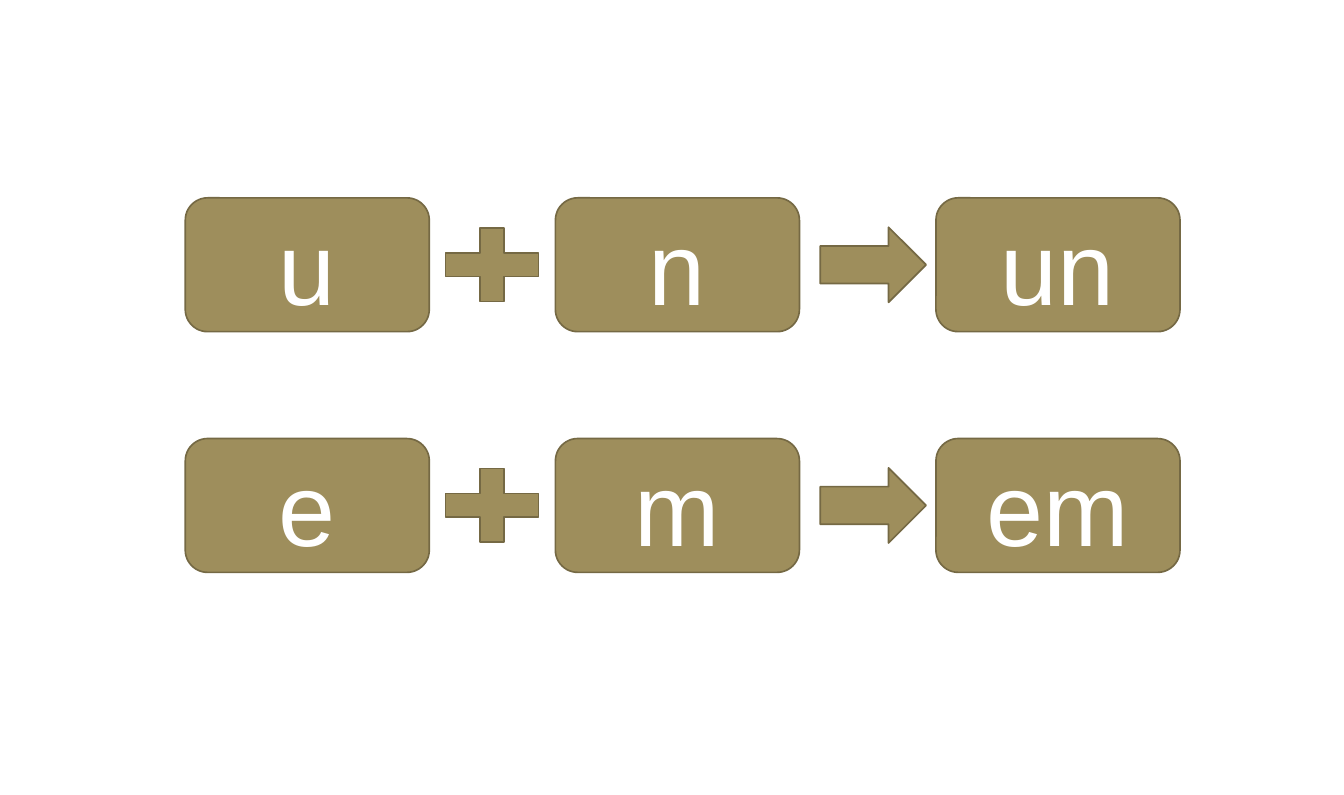
from pptx import Presentation
from pptx.dml.color import RGBColor as Rgb
from pptx.enum.shapes import MSO_SHAPE as Kind
from pptx.enum.text import MSO_ANCHOR as Anchor, PP_ALIGN as Align
from pptx.util import Cm, Pt

COLORS = {"fill": "9E8E5C", "line": "756944", "text": "FFFFFF"}
ROWS = [(4.83, ("u", "n", "un")), (9.22, ("e", "m", "em"))]
BOXES = (3.38, 10.13, 17.07)


def color(name):
    return Rgb.from_string(COLORS[name])


def add_form(slide, kind, left, mid, width, height):
    form = slide.shapes.add_shape(
        kind, Cm(left), Cm(mid - height / 2), Cm(width), Cm(height))
    form.shadow.inherit = False
    form.fill.solid()
    form.fill.fore_color.rgb = color("fill")
    form.line.color.rgb = color("line")
    form.line.width = Pt(0.85)
    return form


def add_box(slide, left, mid, text):
    frame = add_form(slide, Kind.ROUNDED_RECTANGLE, left, mid, 4.45, 2.44).text_frame
    frame.word_wrap = True
    frame.vertical_anchor = Anchor.MIDDLE
    frame.margin_left = frame.margin_right = Cm(0.23)
    frame.margin_top = frame.margin_bottom = Cm(0.1)
    para = frame.paragraphs[0]
    para.alignment = Align.CENTER
    run = para.add_run()
    run.text = text
    run.font.name = "Arial"
    run.font.size = Pt(53)
    run.font.color.rgb = color("text")


def add_plus(slide, mid):
    add_form(slide, Kind.MATH_PLUS, 7.82, mid, 2.31, 1.83)


def add_arrow(slide, mid):
    add_form(slide, Kind.RIGHT_ARROW, 14.96, mid, 1.93, 1.37)


def main():
    deck = Presentation()
    deck.slide_width, deck.slide_height = Cm(24.51), Cm(14.5)
    slide = deck.slides.add_slide(deck.slide_layouts[6])
    for mid, words in ROWS:
        for left, word in zip(BOXES, words):
            add_box(slide, left, mid, word)
        add_plus(slide, mid)
        add_arrow(slide, mid)
    deck.save("out.pptx")


if __name__ == "__main__":
    main()
